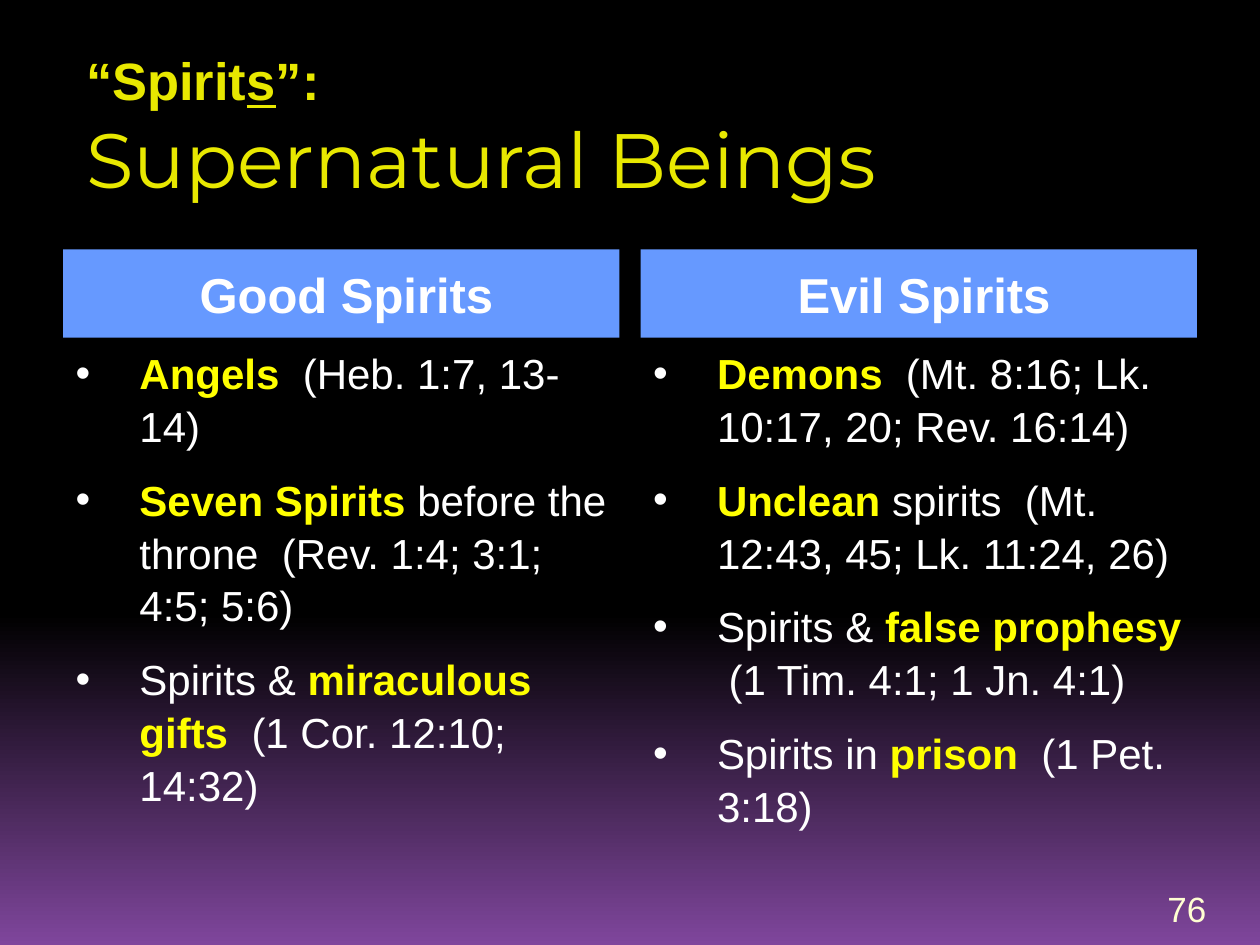
import copy

import pptx
import pptx.dml.color
import pptx.enum.text
import pptx.oxml
import pptx.oxml.ns
import pptx.util

Pt = pptx.util.Pt
RGBColor = pptx.dml.color.RGBColor
Anchor = pptx.enum.text.MSO_ANCHOR
Align = pptx.enum.text.PP_ALIGN

BLACK = RGBColor(0x00, 0x00, 0x00)
PURPLE = RGBColor(0x7F, 0x46, 0x9C)
GOLD = RGBColor(0xE8, 0xE8, 0x00)
YELLOW = RGBColor(0xFF, 0xFF, 0x00)
WHITE = RGBColor(0xFF, 0xFF, 0xFF)
BLUE = RGBColor(0x66, 0x99, 0xFF)
CREAM = RGBColor(0xFF, 0xFF, 0xD2)

COMPARISON_LAYOUT = 4
COLUMN_LEFTS = (36, 366)
COLUMN_WIDTH = 318
HEADING_TOP, HEADING_HEIGHT = 142.5, 50.5
LIST_TOP, LIST_HEIGHT = 193.5, 312
HANGING_INDENT = 36.5

# Each list item is a sequence of (text, is_key_term) pieces.
GOOD_SPIRITS = [
    [("Angels", True), ("  (Heb. 1:7, 13-14)", False)],
    [("Seven Spirits ", True),
     ("before the throne  (Rev. 1:4; 3:1; 4:5; 5:6)", False)],
    [("Spirits & ", False), ("miraculous gifts  ", True),
     ("(1 Cor. 12:10; 14:32)", False)],
]
EVIL_SPIRITS = [
    [("Demons", True), ("  (Mt. 8:16; Lk. 10:17, 20; Rev. 16:14)", False)],
    [("Unclean", True), (" spirits  (Mt. 12:43, 45; Lk. 11:24, 26)", False)],
    [("Spirits & ", False), ("false prophesy  ", True),
     ("(1 Tim. 4:1; 1 Jn. 4:1)", False)],
    [("Spirits in ", False), ("prison", True), ("  (1 Pet. 3:18)", False)],
]


def paint_background(slide):
    """Black down to 65 % of the height, then fading to purple."""
    fill = slide.background.fill
    fill.gradient()
    fill.gradient_angle = 270
    first_stop = slide.element.find(".//" + pptx.oxml.ns.qn("a:gs"))
    first_stop.addnext(copy.deepcopy(first_stop))
    stops = ((0, BLACK), (0.65, BLACK), (1, PURPLE))
    for stop, (position, color) in zip(fill.gradient_stops, stops):
        stop.position = position
        stop.color.rgb = color


def place(shape, left, top, width, height, anchor):
    shape.left, shape.top = Pt(left), Pt(top)
    shape.width, shape.height = Pt(width), Pt(height)
    frame = shape.text_frame
    frame.word_wrap = True
    frame.auto_size = pptx.enum.text.MSO_AUTO_SIZE.NONE
    frame.vertical_anchor = anchor
    return frame


def style_font(font, size, color, name="Arial", bold=False):
    font.size, font.name, font.bold = Pt(size), name, bold
    font.color.rgb = color


def add_run(paragraph, text):
    run = paragraph.add_run()
    run.text = text
    return run


def write_title(title):
    paragraph = place(title, 42, 24, 612, 85.5, Anchor.TOP).paragraphs[0]
    paragraph.alignment = Align.LEFT
    style_font(paragraph.font, 30, GOLD, bold=True)
    for text in ("“Spirit", "s", "”:"):
        run = add_run(paragraph, text)
        style_font(run.font, 30, GOLD, bold=True)
        run.font.underline = text == "s"
    paragraph.add_line_break()
    subject = add_run(paragraph, "Supernatural Beings")
    style_font(subject.font, 44, GOLD, name="Montserrat")


def write_heading(heading, left, text):
    frame = place(heading, left, HEADING_TOP, COLUMN_WIDTH, HEADING_HEIGHT,
                  Anchor.MIDDLE)
    heading.fill.solid()
    heading.fill.fore_color.rgb = BLUE
    paragraph = frame.paragraphs[0]
    paragraph.text = text
    paragraph.alignment = Align.CENTER
    paragraph.space_before = Pt(7)
    paragraph_props = paragraph._p.get_or_add_pPr()
    paragraph_props.set("marL", str(Pt(6)))
    paragraph_props.set("indent", "0")
    style_font(paragraph.font, 28, WHITE, bold=True)


def add_bullet(paragraph):
    """Give the paragraph a white bullet and a hanging indent."""
    paragraph_props = paragraph._p.get_or_add_pPr()
    paragraph_props.set("marL", str(Pt(HANGING_INDENT)))
    paragraph_props.set("indent", str(-Pt(HANGING_INDENT)))
    namespace = pptx.oxml.ns.nsdecls("a")
    for xml in (
        f'<a:buClr {namespace}><a:srgbClr val="{WHITE}"/></a:buClr>',
        f'<a:buFont {namespace} typeface="Arial"/>',
        f'<a:buChar {namespace} char="•"/>',
    ):
        paragraph_props.append(pptx.oxml.parse_xml(xml))


def write_list(body, left, items):
    frame = place(body, left, LIST_TOP, COLUMN_WIDTH, LIST_HEIGHT, Anchor.TOP)
    for index, pieces in enumerate(items):
        paragraph = frame.add_paragraph() if index else frame.paragraphs[0]
        paragraph.line_spacing = 1.05
        paragraph.space_before, paragraph.space_after = Pt(0), Pt(12)
        add_bullet(paragraph)
        paragraph.font.size, paragraph.font.name = Pt(24), "Arial"
        for text, is_key_term in pieces:
            font = add_run(paragraph, text).font
            font.bold = is_key_term
            font.color.rgb = YELLOW if is_key_term else WHITE


def write_page_number(slide, number):
    box = slide.shapes.add_textbox(0, 0, 0, 0)
    frame = place(box, 660, 505.5, 48, 29, Anchor.BOTTOM)
    paragraph = frame.paragraphs[0]
    paragraph.text = number
    style_font(paragraph.font, 20, CREAM)


def main():
    presentation = pptx.Presentation()
    presentation.slide_width, presentation.slide_height = Pt(720), Pt(540)
    layout = presentation.slide_layouts[COMPARISON_LAYOUT]
    slide = presentation.slides.add_slide(layout)
    paint_background(slide)

    title, good_heading, good_list, evil_heading, evil_list = slide.placeholders
    write_title(title)
    good_left, evil_left = COLUMN_LEFTS
    write_heading(good_heading, good_left, "Good Spirits")
    write_heading(evil_heading, evil_left, "Evil Spirits")
    write_list(good_list, good_left, GOOD_SPIRITS)
    write_list(evil_list, evil_left, EVIL_SPIRITS)
    write_page_number(slide, "76")
    presentation.save("out.pptx")


if __name__ == "__main__":
    main()
